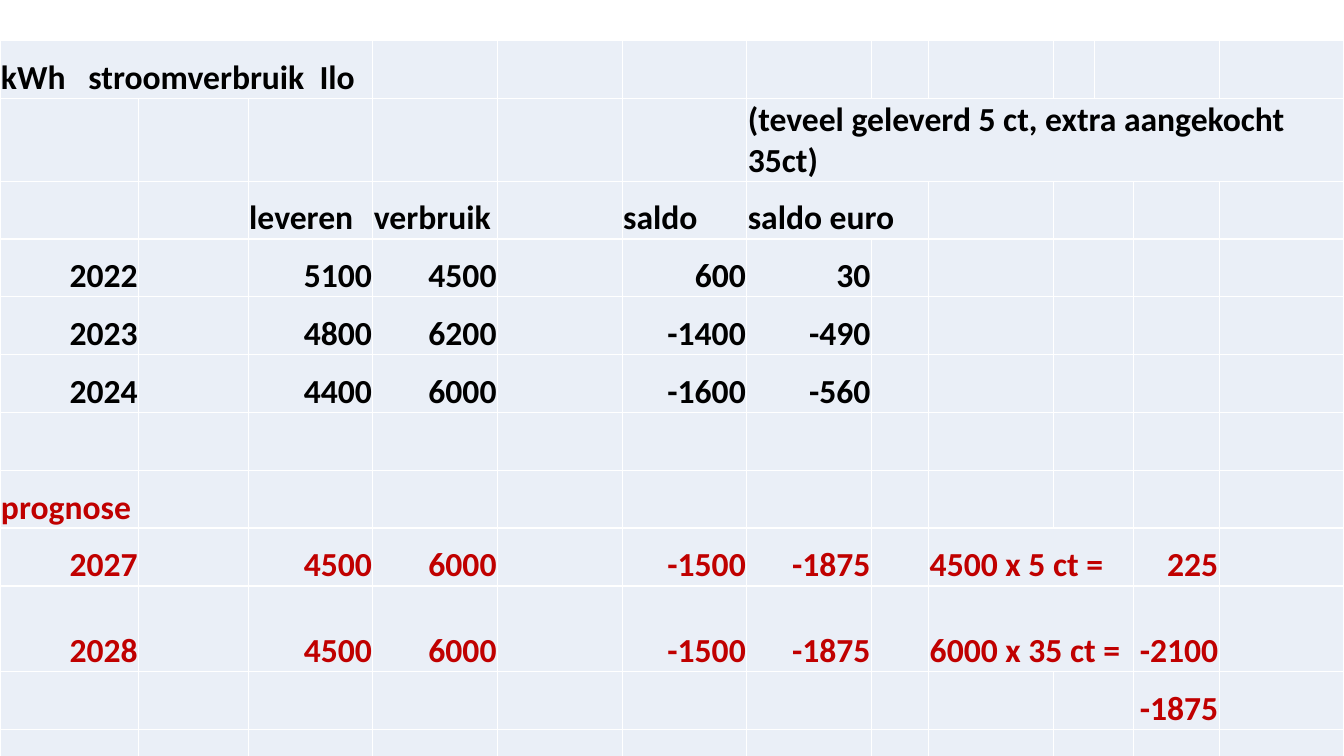
from typing import NamedTuple

from lxml.etree import SubElement
from pptx import Presentation
from pptx.dml.color import RGBColor
from pptx.enum.text import MSO_ANCHOR, PP_ALIGN
from pptx.oxml.ns import qn
from pptx.table import Table, _Cell
from pptx.util import Inches, Pt

BLACK = RGBColor(0x00, 0x00, 0x00)
RED = RGBColor(0xC0, 0x00, 0x00)
PALE = RGBColor(0xEA, 0xEF, 0xF7)
WHITE = RGBColor(0xFF, 0xFF, 0xFF)

WIDE = 13.33
HIGH = 7.41
NOTE = 0.82
TALL = 0.85
ROW = (HIGH - NOTE - TALL) / 10
WIDTHS = [1.38, 1.09, 1.24, 1.24, 1.24, 1.24, 1.24, 0.57, 1.24, 0.41, 0.39, 0.85, 1.24]
PAIR = ((9, 10),)
SUM = ((8, 10),)


class Line(NamedTuple):
    texts: dict[int, str]
    spans: tuple[tuple[int, int], ...] = PAIR
    color: RGBColor = BLACK
    height: float = ROW


def year(*values: str) -> dict[int, str]:
    return dict(zip((0, 2, 3, 5, 6, 8, 11), values))


LINES = [
    Line({0: "kWh   stroomverbruik  Ilo"}, ((0, 2), (10, 11))),
    Line({6: "(teveel geleverd 5 ct, extra aangekocht 35ct)"}, ((6, 12),), height=NOTE),
    Line({2: "leveren", 3: "verbruik", 5: "saldo", 6: "saldo euro"}, ((6, 7), (9, 10))),
    Line(year("2022", "5100", "4500", "600", "30")),
    Line(year("2023", "4800", "6200", "-1400", "-490")),
    Line(year("2024", "4400", "6000", "-1600", "-560")),
    Line({}),
    Line({0: "prognose"}, color=RED),
    Line(year("2027", "4500", "6000", "-1500", "-1875", "4500 x 5 ct =", "225"), SUM, RED),
    Line(year("2028", "4500", "6000", "-1500", "-1875", "6000 x 35 ct =", "-2100"), SUM, RED, TALL),
    Line({11: "-1875"}, color=RED),
    Line({}),
]


def style_cell(cell: _Cell) -> None:
    props = cell._tc.get_or_add_tcPr()
    for side in ("a:lnL", "a:lnR", "a:lnT", "a:lnB"):
        edge = SubElement(props, qn(side), w=str(Pt(1)))
        fill = SubElement(edge, qn("a:solidFill"))
        SubElement(fill, qn("a:srgbClr"), val=str(WHITE))
    cell.fill.solid()
    cell.fill.fore_color.rgb = PALE


def write_cell(cell: _Cell, text: str, color: RGBColor) -> None:
    cell.text = text
    cell.vertical_anchor = MSO_ANCHOR.BOTTOM
    cell.margin_left = cell.margin_right = cell.margin_top = Inches(0.01)
    cell.margin_bottom = 0
    para = cell.text_frame.paragraphs[0]
    number = text.lstrip("-").isdigit()
    para.alignment = PP_ALIGN.RIGHT if number else PP_ALIGN.LEFT
    para.font.name = "Calibri"
    para.font.size = Pt(24)
    para.font.bold = True
    para.font.color.rgb = color


def draw_line(table: Table, row: int, line: Line) -> None:
    table.rows[row].height = Inches(line.height)
    for col in range(len(WIDTHS)):
        style_cell(table.cell(row, col))
    for first, last in line.spans:
        table.cell(row, first).merge(table.cell(row, last))
    for col, text in line.texts.items():
        write_cell(table.cell(row, col), text, line.color)


def main() -> None:
    deck = Presentation()
    deck.slide_width = Inches(WIDE)
    deck.slide_height = Inches(7.5)
    slide = deck.slides.add_slide(deck.slide_layouts[6])
    frame = slide.shapes.add_table(
        len(LINES), len(WIDTHS), 0, Inches(0.4), Inches(WIDE), Inches(HIGH)
    )
    table = frame.table
    table.first_row = table.horz_banding = False
    scale = WIDE / sum(WIDTHS)
    for column, width in zip(table.columns, WIDTHS):
        column.width = Inches(width * scale)
    for row, line in enumerate(LINES):
        draw_line(table, row, line)
    deck.save("out.pptx")


if __name__ == "__main__":
    main()
